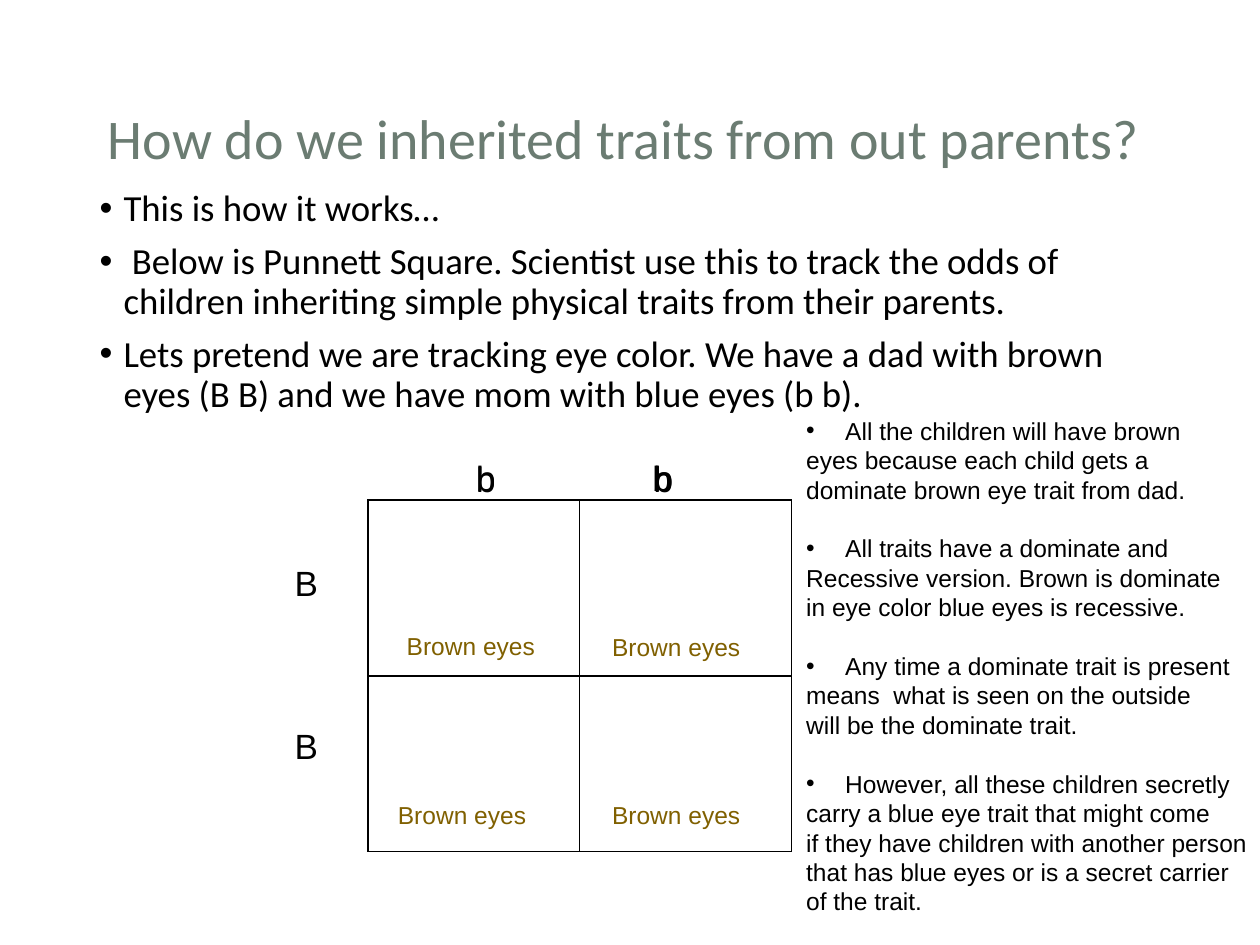
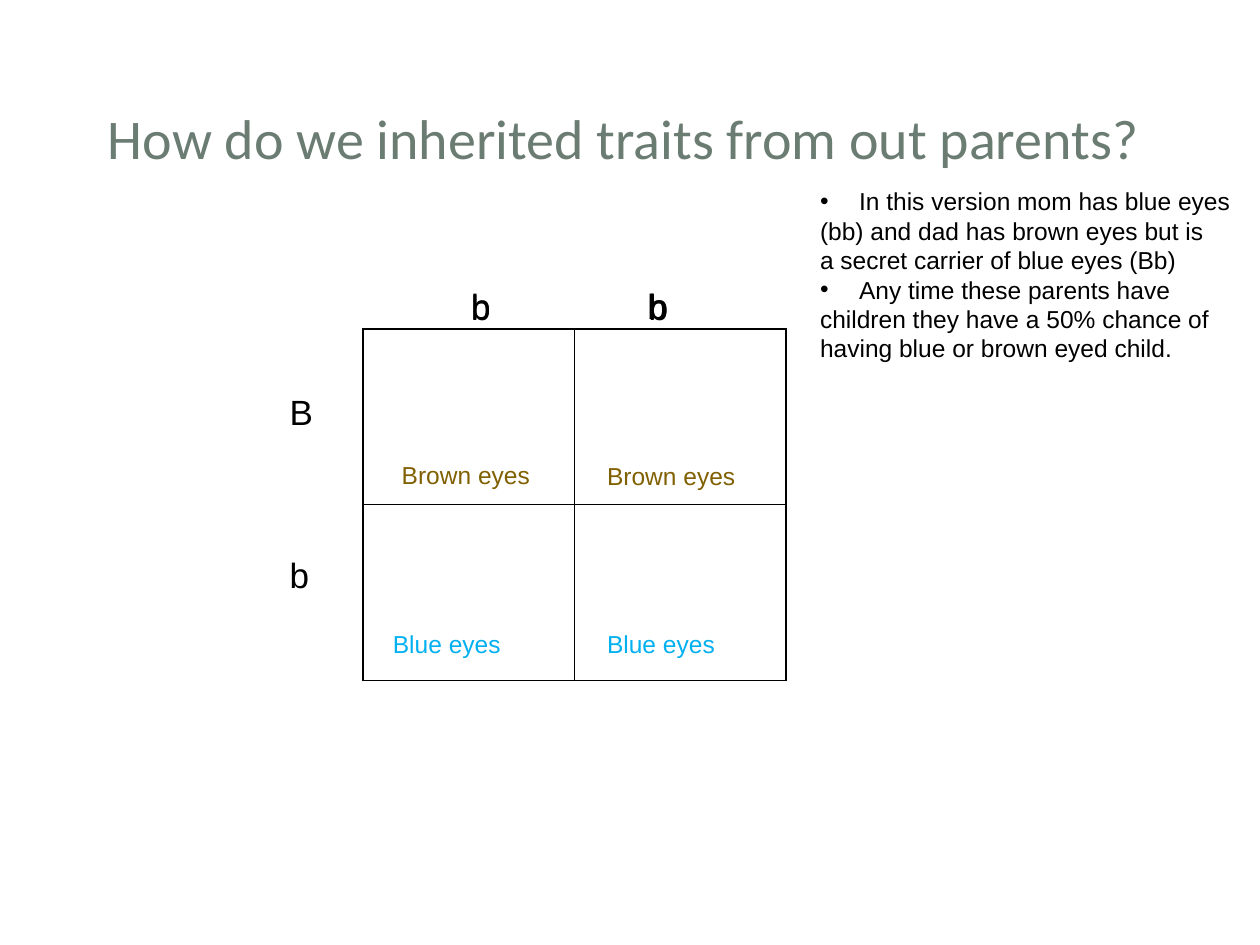
from dataclasses import dataclass
from itertools import product

from lxml.etree import SubElement
from pptx import Presentation
from pptx.dml.color import RGBColor
from pptx.enum.text import MSO_ANCHOR as Anchor, MSO_AUTO_SIZE as AutoSize, PP_ALIGN as Align
from pptx.oxml.ns import qn
from pptx.util import Emu, Inches, Pt


@dataclass(frozen=True)
class Theme:
    heading_font: str = "Calibri"
    label_font: str = "Arial"
    title_color: str = "6B7C72"
    ink: str = "000000"
    brown: str = "806000"
    blue: str = "00B0F0"
    title_size: float = 32
    body_size: float = 21
    allele_size: float = 20
    note_size: float = 14
    border: float = 1
    leading: float = 1.2


THEME = Theme()
WIDTH, HEIGHT = Inches(10), Inches(7.5)
GRID_COLUMNS = 100
CELL = 16.8, 13.95
TITLE = "How do we inherited traits from out parents? "
INTRO = [
    "This is how it works…",
    " Below is Punnett Square. Scientist use this to track the odds of children "
    "inheriting simple physical traits from their parents.",
    "Lets pretend we are tracking eye color. We have a dad with brown eyes (B B) "
    "and we have mom with blue eyes (b b).",
]
DOMINANCE_NOTES = [
    ["All the children will have brown", "eyes because each child gets a",
     "dominate brown eye trait from dad."],
    ["All traits have a dominate and", "Recessive version. Brown is dominate",
     "in eye color blue eyes is recessive."],
    ["Any time a dominate trait is present", "means  what is seen on the outside",
     "will be the dominate trait."],
    ["However, all these children secretly", "carry a blue eye trait that might come",
     "if they have children with another person",
     "that has blue eyes or is a secret carrier", "of the trait."],
]
CARRIER_NOTES = [
    ["In this version mom has blue eyes", "(bb) and dad has brown eyes but is",
     "a secret carrier of blue eyes (Bb)"],
    ["Any time these parents have", "children they have a 50% chance of",
     "having blue or brown eyed child."],
]
EYES = {"Brown eyes": THEME.brown, "Blue eyes": THEME.blue}
MOTHER_ALLELES = [
    (7.6, [(0, 0), (0, 0.1)]),
    (21.6, [(0, 0), (0.1, 0.1), (0.1, 0)]),
]
FATHER_ROWS = [4.4, 17.3]
CHILD_SPOTS = [[(2.1, 9.9), (18.4, 10)], [(1.4, 23.3), (18.4, 23.3)]]


def grid(units):
    return Emu(round(WIDTH * units / GRID_COLUMNS))


def assign(target, **values):
    for name, value in values.items():
        setattr(target, name, value)


def place(shape, left, top, width, height):
    assign(shape, left=grid(left), top=grid(top), width=grid(width), height=grid(height))


def write(para, text, font, size, color):
    span = para.add_run()
    span.text = text
    assign(span.font, name=font, size=Pt(size))
    span.font.color.rgb = RGBColor.from_string(color)


def add_bullet(para, indent):
    properties = para._p.get_or_add_pPr()
    properties.set("marL", str(grid(indent)))
    properties.set("indent", str(-grid(indent)))
    SubElement(properties, qn("a:buFont"), typeface=THEME.label_font)
    SubElement(properties, qn("a:buChar"), char="•")


def paragraphs(frame, count):
    yield frame.paragraphs[0]
    for _ in range(count - 1):
        yield frame.add_paragraph()


def add_page(deck, layout):
    page = deck.slides.add_slide(deck.slide_layouts.get_by_name(layout))
    title = page.shapes.title
    place(title, 6.9, 4, 86.2, 14.5)
    assign(title.text_frame, vertical_anchor=Anchor.MIDDLE, auto_size=AutoSize.NONE)
    para = title.text_frame.paragraphs[0]
    assign(para, alignment=Align.CENTER, line_spacing=0.9, space_before=Pt(0))
    write(para, TITLE, THEME.heading_font, THEME.title_size, THEME.title_color)
    return page


def fill_body(page, items):
    body = page.placeholders[1]
    place(body, 6.9, 14.6, 86.2, 50)
    frame = body.text_frame
    frame.auto_size = AutoSize.NONE
    for para, text in zip(paragraphs(frame, len(items)), items):
        assign(para, line_spacing=0.9, space_before=Pt(7.5))
        add_bullet(para, 1.9)
        write(para, text, THEME.heading_font, THEME.body_size, THEME.ink)


def add_box(page, left, top, width, height, wrap=False):
    box = page.shapes.add_textbox(*map(grid, (left, top, width, height)))
    assign(box.text_frame, word_wrap=wrap, auto_size=AutoSize.SHAPE_TO_FIT_TEXT)
    return box.text_frame


def write_label(para, text, size, color=THEME.ink):
    para.line_spacing = Pt(size * THEME.leading)
    write(para, text, THEME.label_font, size, color)


def add_allele(page, left, top, letter):
    frame = add_box(page, left, top, 3.9 if letter.isupper() else 3.6, 4.4)
    write_label(frame.paragraphs[0], letter, THEME.allele_size)


def add_notes(page, area, notes, gap=0):
    frame = add_box(page, *area)
    lines = [(note, row, text) for note, texts in enumerate(notes)
             for row, text in enumerate(texts)]
    for para, (note, row, text) in zip(paragraphs(frame, len(lines)), lines):
        write_label(para, text, THEME.note_size)
        if row == 0:
            para.space_before = Pt(gap if note else 0)
            add_bullet(para, 3.1)


def outline(cell):
    properties = cell._tc.get_or_add_tcPr()
    for side in ("lnL", "lnR", "lnT", "lnB"):
        line = SubElement(properties, qn(f"a:{side}"), w=str(Pt(THEME.border)))
        fill = SubElement(line, qn("a:solidFill"))
        SubElement(fill, qn("a:srgbClr"), val=THEME.ink)
    cell.fill.background()


def add_punnett_square(page, left, top, father, children):
    width, height = CELL
    table = page.shapes.add_table(
        2, 2, *map(grid, (left, top, 2 * width, 2 * height))).table
    assign(table, first_row=False, horz_banding=False)
    for row, column in product(range(2), repeat=2):
        outline(table.cell(row, column))
    for across, layers in MOTHER_ALLELES:
        for shift, drop in layers:
            add_allele(page, left + across + shift, top - 4 + drop, "b")
    for letter, down in zip(father, FATHER_ROWS):
        add_allele(page, left - 6.8, top + down, letter)
    for eyes, spots in zip(children, CHILD_SPOTS):
        for across, down in spots:
            frame = add_box(page, left + across, top + down, 13.6, 3.4, wrap=True)
            write_label(frame.paragraphs[0], eyes, THEME.note_size, EYES[eyes])


def main():
    deck = Presentation()
    assign(deck, slide_width=WIDTH, slide_height=HEIGHT)

    page = add_page(deck, "Title and Content")
    fill_body(page, INTRO)
    add_punnett_square(page, 29.2, 39.7, "BB", ["Brown eyes", "Brown eyes"])
    add_notes(page, (63, 32.5, 37.2, 41.1), DOMINANCE_NOTES,
              gap=THEME.note_size * THEME.leading)

    page = add_page(deck, "Title Only")
    add_punnett_square(page, 28.8, 26.1, "Bb", ["Brown eyes", "Blue eyes"])
    add_notes(page, (64.1, 14.3, 34.8, 24.6), CARRIER_NOTES)

    deck.save("out.pptx")


if __name__ == "__main__":
    main()
